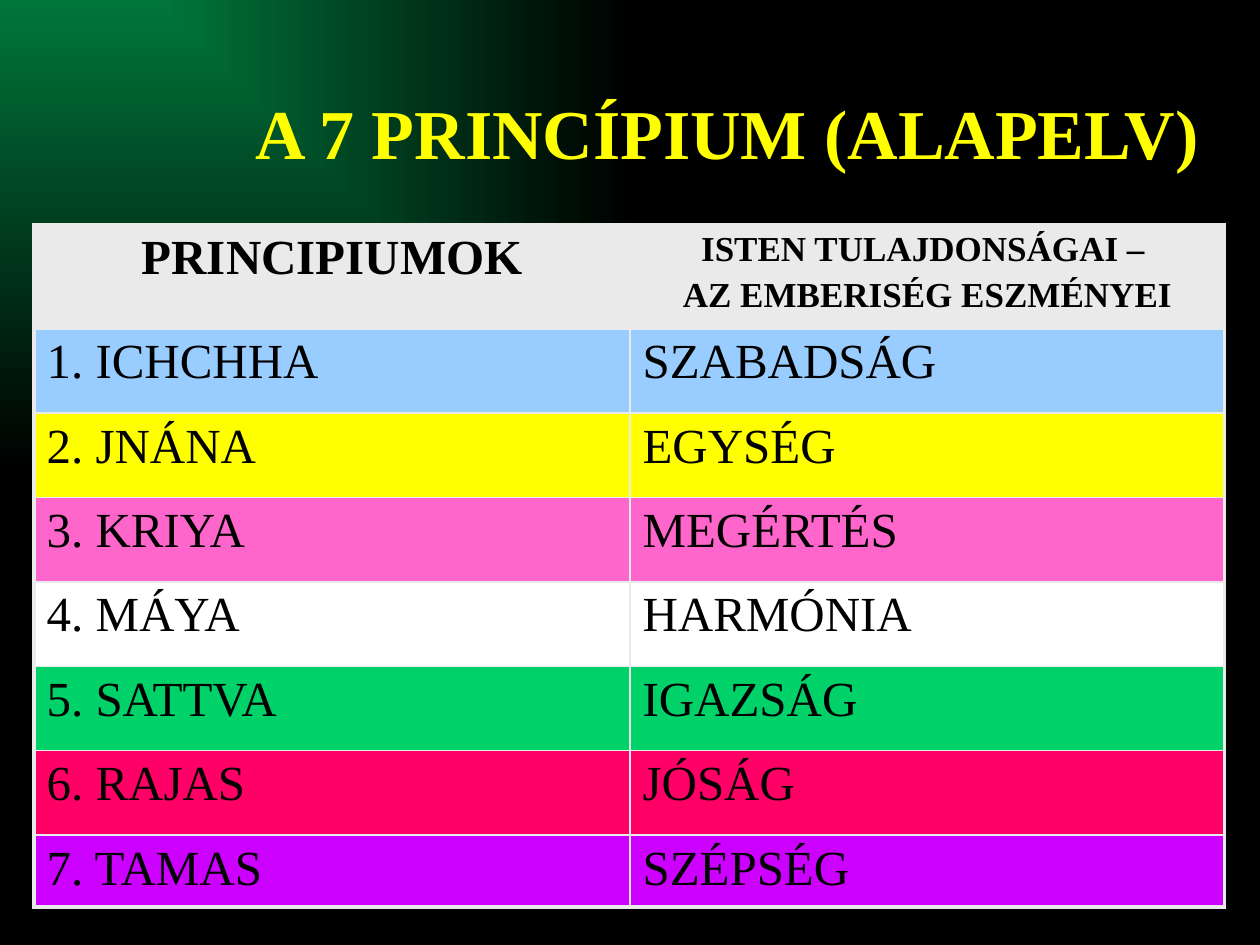
from dataclasses import dataclass

from lxml import etree
from pptx import Presentation
from pptx.dml.color import RGBColor
from pptx.enum.text import MSO_ANCHOR, PP_ALIGN
from pptx.oxml import parse_xml
from pptx.oxml.ns import nsdecls, qn
from pptx.util import Inches, Pt

LEFT, CENTER = PP_ALIGN.LEFT, PP_ALIGN.CENTER
MIDDLE = MSO_ANCHOR.MIDDLE


@dataclass(frozen=True)
class Theme:
    font: str = "Times New Roman"
    glow: str = "00763B"
    dark: str = "000000"
    title: str = "FFFF00"
    text: str = "000000"
    frame: str = "EAEAEA"
    title_size: int = 40
    body_size: int = 28
    small_size: int = 20
    outer_line: float = 2.25
    inner_line: float = 1


THEME = Theme()

HEADERS = [
    (["PRINCIPIUMOK"], THEME.body_size),
    (["ISTEN TULAJDONSÁGAI – ", "AZ EMBERISÉG ESZMÉNYEI"], THEME.small_size),
]
PRINCIPLES = [
    ("ICHCHHA", "SZABADSÁG", "99CCFF"),
    ("JNÁNA", "EGYSÉG", "FFFF00"),
    ("KRIYA", "MEGÉRTÉS", "FF66CC"),
    ("MÁYA", "HARMÓNIA", "FFFFFF"),
    ("SATTVA", "IGAZSÁG", "00D269"),
    ("RAJAS", "JÓSÁG", "FF0066"),
    ("TAMAS", "SZÉPSÉG", "CC00FF"),
]
COLUMN_WIDTHS = [4.73, 4.72]
ROW_HEIGHTS = [0.83] + [0.67] * 6 + [0.57]


def write_lines(text_frame, lines, size, color, bold=False, align=LEFT):
    for index, line in enumerate(lines):
        paragraph = text_frame.paragraphs[0] if index == 0 else text_frame.add_paragraph()
        paragraph.alignment = align
        if index:
            paragraph.space_before = Pt(0.2 * size)
        run = paragraph.add_run()
        run.text = line
        formats = {"name": THEME.font, "size": Pt(size), "bold": bold}
        for name, value in formats.items():
            setattr(run.font, name, value)
        run.font.color.rgb = RGBColor.from_string(color)


def paint_background(slide):
    """Fill the background with a glow that spreads from the top left corner."""
    fill = slide.background.fill
    fill.gradient()
    for stop, color in zip(fill.gradient_stops, (THEME.glow, THEME.dark)):
        stop.color.rgb = RGBColor.from_string(color)
    gradient = next(slide.element.iter(qn("a:gradFill")))
    gradient.replace(gradient.find(qn("a:lin")), parse_xml(
        f'<a:path {nsdecls("a")} path="rect"><a:fillToRect r="100000" b="100000"/></a:path>'))


def add_title(slide, left, top, width, height):
    box = slide.shapes.add_textbox(left, top, width, height)
    box.text_frame.word_wrap = True
    box.text_frame.vertical_anchor = MIDDLE
    write_lines(box.text_frame, ["A 7 PRINCÍPIUM (ALAPELV)"],
                THEME.title_size, THEME.title, bold=True)


def set_borders(cell, outer_sides):
    """Draw all four borders, with the heavier line on the outer sides."""
    properties = cell._tc.get_or_add_tcPr()
    for index, side in enumerate("LRTB"):
        points = THEME.outer_line if side in outer_sides else THEME.inner_line
        line = etree.Element(qn(f"a:ln{side}"), w=str(Pt(points)))
        fill = etree.SubElement(line, qn("a:solidFill"))
        etree.SubElement(fill, qn("a:srgbClr"), val=THEME.frame)
        properties.insert(index, line)


def add_principles_table(slide, left, top, width, height):
    row_count, column_count = len(ROW_HEIGHTS), len(COLUMN_WIDTHS)
    table = slide.shapes.add_table(row_count, column_count, left, top, width, height).table
    table.horz_banding = False
    for column, column_width in zip(table.columns, COLUMN_WIDTHS):
        column.width = Inches(column_width)
    for row, row_height in zip(table.rows, ROW_HEIGHTS):
        row.height = Inches(row_height)

    for column, (lines, size) in enumerate(HEADERS):
        write_lines(table.cell(0, column).text_frame, lines, size, THEME.text,
                    bold=True, align=CENTER)
    for number, (principle, ideal, _) in enumerate(PRINCIPLES, start=1):
        for column, text in enumerate((f"{number}. {principle}", ideal)):
            write_lines(table.cell(number, column).text_frame, [text],
                        THEME.body_size, THEME.text)

    row_colors = [THEME.frame] + [color for _, _, color in PRINCIPLES]
    for row, color in enumerate(row_colors):
        for column in range(column_count):
            cell = table.cell(row, column)
            cell.fill.solid()
            cell.fill.fore_color.rgb = RGBColor.from_string(color)
            edges = {"L": column == 0, "R": column == column_count - 1,
                     "T": row == 0, "B": row == row_count - 1}
            set_borders(cell, [side for side, is_outer in edges.items() if is_outer])


def main():
    presentation = Presentation()
    presentation.slide_width, presentation.slide_height = Inches(10), Inches(7.5)
    slide = presentation.slides.add_slide(presentation.slide_layouts[6])
    paint_background(slide)
    add_title(slide, Inches(1.93), Inches(0.25), Inches(7.9), Inches(1.58))
    add_principles_table(slide, Inches(0.27), Inches(1.78),
                         Inches(sum(COLUMN_WIDTHS)), Inches(sum(ROW_HEIGHTS)))
    presentation.save("out.pptx")


if __name__ == "__main__":
    main()
